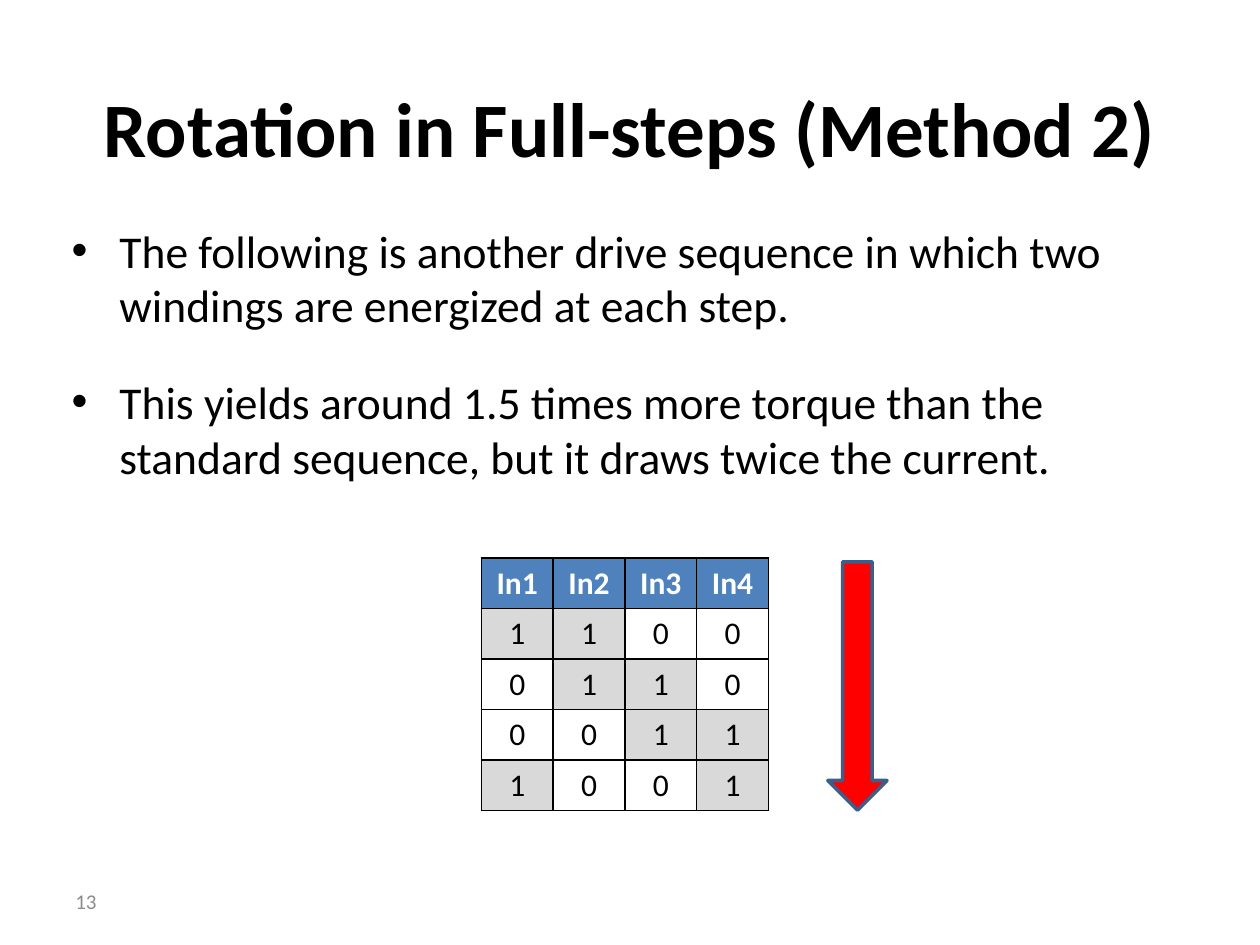
from dataclasses import dataclass

from lxml import etree
from pptx import Presentation
from pptx.dml.color import RGBColor
from pptx.enum.shapes import MSO_SHAPE
from pptx.enum.text import MSO_ANCHOR, PP_ALIGN
from pptx.oxml.ns import qn
from pptx.util import Inches, Pt

DOWN_ARROW = MSO_SHAPE.DOWN_ARROW
TOP, MIDDLE = MSO_ANCHOR.TOP, MSO_ANCHOR.MIDDLE
LEFT, CENTER = PP_ALIGN.LEFT, PP_ALIGN.CENTER


@dataclass(frozen=True)
class Theme:
    font: str = "Calibri"
    ink: str = "000000"
    paper: str = "FFFFFF"
    muted: str = "8C8C8C"
    header: str = "4F81BD"
    energized: str = "D9D9D9"
    arrow: str = "FF0000"
    arrow_line: str = "3A5F8C"
    title_size: int = 44
    body_size: int = 26
    table_size: int = 18
    number_size: int = 12


THEME = Theme()

POINTS = [
    "The following is another drive sequence in which two windings are energized at each step.",
    "This yields around 1.5 times more torque than the standard sequence, "
    "but it draws twice the current.",
]
INPUTS = ["In1", "In2", "In3", "In4"]
STEPS = ["1100", "0110", "0011", "1001"]


def fill_solid(target, color):
    target.fill.solid()
    target.fill.fore_color.rgb = RGBColor.from_string(color)


def add_run(paragraph, text, size, color=THEME.ink, bold=False):
    run = paragraph.add_run()
    run.text = text
    run.font.name = THEME.font
    run.font.size = Pt(size)
    run.font.bold = bold
    run.font.color.rgb = RGBColor.from_string(color)


def add_text_frame(slide, box, anchor):
    shape = slide.shapes.add_textbox(*map(Inches, box))
    shape.text_frame.word_wrap = True
    shape.text_frame.vertical_anchor = anchor
    return shape.text_frame


def add_line(slide, box, text, size, color, alignment, bold=False):
    paragraph = add_text_frame(slide, box, MIDDLE).paragraphs[0]
    paragraph.alignment = alignment
    add_run(paragraph, text, size, color, bold)


def add_bullets(slide, box, points):
    frame = add_text_frame(slide, box, TOP)
    for index, point in enumerate(points):
        paragraph = frame.add_paragraph() if index else frame.paragraphs[0]
        paragraph.space_before = paragraph.space_after = Pt(12)
        properties = paragraph._p.get_or_add_pPr()
        properties.set("marL", str(Inches(0.38)))
        properties.set("indent", str(-Inches(0.38)))
        etree.SubElement(properties, qn("a:buFont"), typeface="Arial")
        etree.SubElement(properties, qn("a:buChar"), char="•")
        add_run(paragraph, point, THEME.body_size)


def set_borders(cell):
    properties = cell._tc.get_or_add_tcPr()
    for position, side in enumerate(("a:lnL", "a:lnR", "a:lnT", "a:lnB")):
        border = etree.Element(qn(side), w=str(Pt(1)))
        fill = etree.SubElement(border, qn("a:solidFill"))
        etree.SubElement(fill, qn("a:srgbClr"), val=THEME.ink)
        properties.insert(position, border)


def fill_cell(cell, text, background, color, bold):
    fill_solid(cell, background)
    set_borders(cell)
    paragraph = cell.text_frame.paragraphs[0]
    paragraph.alignment = CENTER
    add_run(paragraph, text, THEME.table_size, color, bold)


def add_sequence_table(slide, box, inputs, steps):
    rows, columns = len(steps) + 1, len(inputs)
    table = slide.shapes.add_table(rows, columns, *map(Inches, box)).table
    for column in table.columns:
        column.width = Inches(box[2] / columns)
    for row in table.rows:
        row.height = Inches(box[3] / rows)
    for column, name in enumerate(inputs):
        fill_cell(table.cell(0, column), name, THEME.header, THEME.paper, True)
    for row, step in enumerate(steps, start=1):
        for column, state in enumerate(step):
            background = THEME.energized if state == "1" else THEME.paper
            fill_cell(table.cell(row, column), state, background, THEME.ink, False)


def add_direction_arrow(slide, box):
    shape = slide.shapes.add_shape(DOWN_ARROW, *map(Inches, box))
    shape.shadow.inherit = False
    fill_solid(shape, THEME.arrow)
    shape.line.color.rgb = RGBColor.from_string(THEME.arrow_line)
    shape.line.width = Pt(2)


def main():
    presentation = Presentation()
    presentation.slide_width = Inches(10)
    presentation.slide_height = Inches(7.5)
    slide = presentation.slides.add_slide(presentation.slide_layouts[6])
    fill_solid(slide.background, THEME.paper)

    add_line(slide, (0.5, 0.54, 9, 0.93), "Rotation in Full-steps (Method 2)",
             THEME.title_size, THEME.ink, CENTER, bold=True)
    add_bullets(slide, (0.47, 1.72, 9, 2.26), POINTS)
    add_line(slide, (0.5, 6.95, 2.33, 0.4), "13",
             THEME.number_size, THEME.muted, LEFT)
    add_direction_arrow(slide, (6.57, 4.46, 0.47, 1.97))
    add_sequence_table(slide, (3.82, 4.43, 2.28, 2), INPUTS, STEPS)

    presentation.save("out.pptx")


if __name__ == "__main__":
    main()
